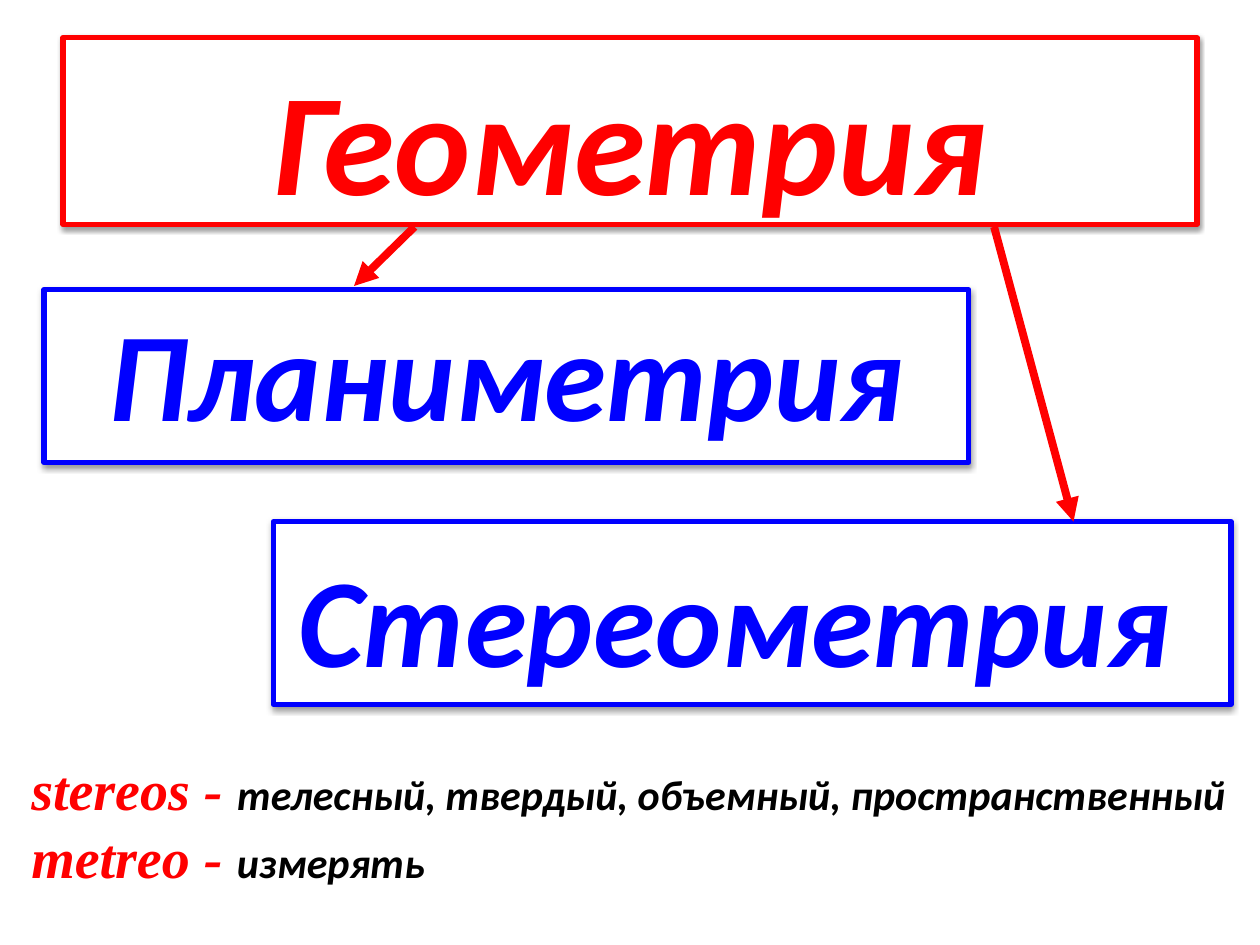
from typing import NamedTuple

from lxml import etree
from pptx import Presentation
from pptx.dml.color import RGBColor
from pptx.enum.shapes import MSO_CONNECTOR as Link, MSO_SHAPE as Shape
from pptx.enum.text import MSO_ANCHOR as Anchor, MSO_AUTO_SIZE as Fit, PP_ALIGN as Align
from pptx.oxml import parse_xml
from pptx.oxml.ns import nsdecls, qn
from pptx.util import Inches, Pt

RED = RGBColor(0xFF, 0x00, 0x00)
BLUE = RGBColor(0x00, 0x00, 0xFF)
BLACK = RGBColor(0x00, 0x00, 0x00)
WHITE = RGBColor(0xFF, 0xFF, 0xFF)
SANS, SERIF = "Calibri", "Times New Roman"

SHADOW = (
    f'<a:effectLst {nsdecls("a")}>'
    '<a:outerShdw blurRad="39370" dist="20320" dir="5400000" rotWithShape="0">'
    '<a:srgbClr val="000000"><a:alpha val="38000"/></a:srgbClr>'
    '</a:outerShdw></a:effectLst>'
)


class Run(NamedTuple):
    text: str
    size: float
    color: RGBColor
    font: str = SANS


class Box(NamedTuple):
    area: tuple
    runs: list
    color: RGBColor
    anchor: Anchor = Anchor.TOP
    inset: tuple = (0.1, 0.05, 0.1, 0.05)
    before: int = 20  # percent of a line


class Arrow(NamedTuple):
    start: tuple
    end: tuple


BOXES = [
    Box((0.5, 0.3, 9, 1.48), [Run("Геометрия", 82.8, RED)], RED,
        Anchor.BOTTOM, (0, 0.05, 0, 0), 0),
    Box((0.35, 2.3, 7.34, 1.37), [Run("Планиметрия", 72, BLUE)], BLUE),
    Box((2.17, 4.14, 7.6, 1.45),
        [Run("Стереометрия", 72, BLUE), Run(" ", 80, BLUE, SERIF)], BLUE),
]
ARROWS = [Arrow((3.29, 1.8), (2.81, 2.27)), Arrow((7.89, 1.8), (8.52, 4.14))]
NOTES = [
    [Run("stereos -", 32, RED, SERIF), Run(" ", 36, RED),
     Run("телесный, твердый, объемный, пространственный", 24, BLACK)],
    [Run("metreo - ", 32, RED, SERIF), Run("измерять", 24, BLACK)],
]


def write(shape, lines: list, *, align=Align.LEFT, anchor=Anchor.TOP,
          inset=(0.1, 0.05, 0.1, 0.05), before: int = 0) -> None:
    frame = shape.text_frame
    frame.word_wrap = True
    frame.auto_size = Fit.NONE
    frame.vertical_anchor = anchor
    (frame.margin_left, frame.margin_top,
     frame.margin_right, frame.margin_bottom) = map(Inches, inset)
    for i, runs in enumerate(lines):
        para = frame.add_paragraph() if i else frame.paragraphs[0]
        para.alignment = align
        if before:
            space = etree.SubElement(para._p.get_or_add_pPr(), qn("a:spcBef"))
            etree.SubElement(space, qn("a:spcPct"), val=str(before * 1000))
        for item in runs:
            run = para.add_run()
            run.text = item.text
            font = run.font
            font.name, font.size = item.font, Pt(item.size)
            font.bold = font.italic = True
            font.color.rgb = item.color


def draw_box(slide, box: Box) -> None:
    rect = slide.shapes.add_shape(Shape.RECTANGLE, *map(Inches, box.area))
    rect.fill.solid()
    rect.fill.fore_color.rgb = WHITE
    rect.line.color.rgb = box.color
    rect.line.width = Pt(3)
    rect._element.spPr.append(parse_xml(SHADOW))
    write(rect, [box.runs], align=Align.CENTER, anchor=box.anchor,
          inset=box.inset, before=box.before)


def draw_arrow(slide, arrow: Arrow) -> None:
    line = slide.shapes.add_connector(
        Link.STRAIGHT, *map(Inches, arrow.start + arrow.end))
    line.line.color.rgb = RED
    line.line.width = Pt(4.5)
    etree.SubElement(line.line._get_or_add_ln(), qn("a:tailEnd"), type="triangle")
    etree.SubElement(line._element.spPr, qn("a:effectLst"))


def main() -> None:
    deck = Presentation()
    deck.slide_width, deck.slide_height = Inches(10), Inches(7.5)
    slide = deck.slides.add_slide(deck.slide_layouts[6])

    # Geometry and its two branches
    for box in BOXES:
        draw_box(slide, box)
    for arrow in ARROWS:
        draw_arrow(slide, arrow)

    # Word origins
    area = map(Inches, (0.15, 5.88, 9.73, 1.25))
    write(slide.shapes.add_textbox(*area), NOTES)

    deck.save("out.pptx")


if __name__ == "__main__":
    main()
